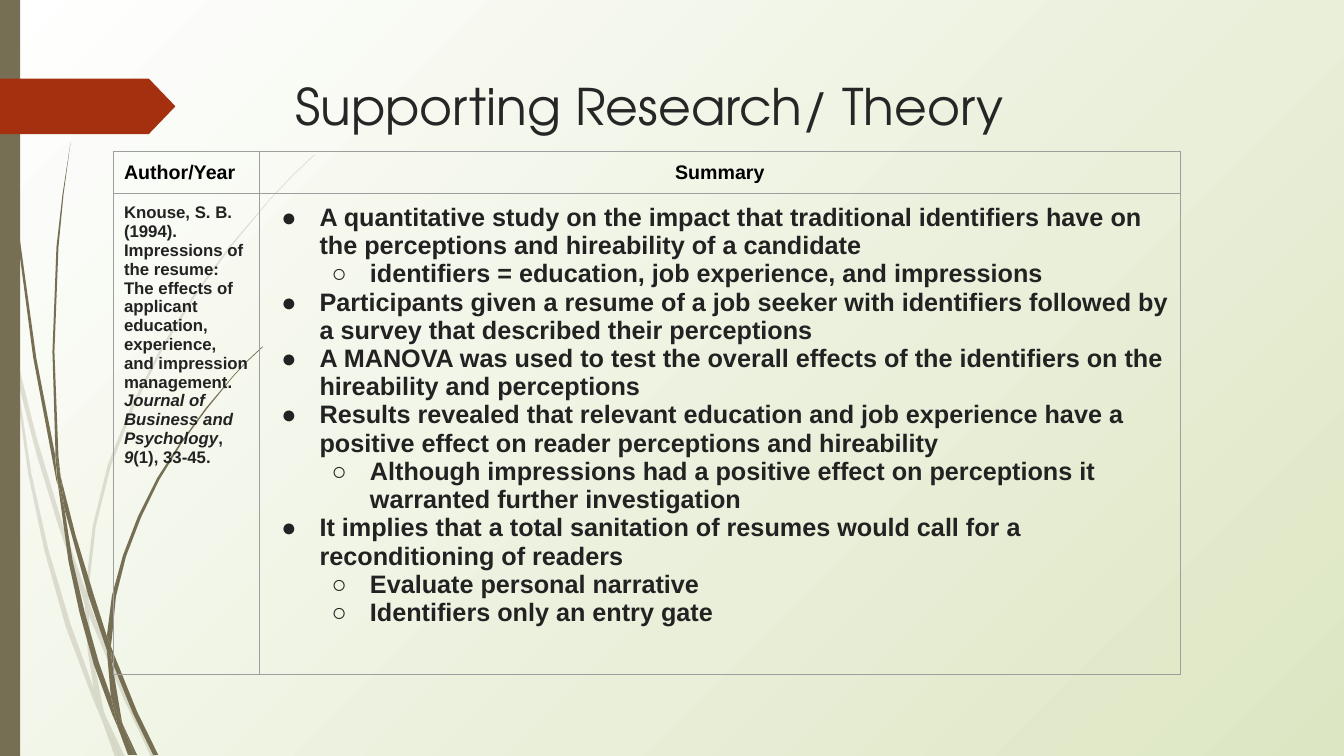
from dataclasses import dataclass

from lxml.etree import SubElement
from pptx import Presentation
from pptx.dml.color import RGBColor
from pptx.enum.shapes import MSO_SHAPE
from pptx.enum.text import MSO_ANCHOR, PP_ALIGN
from pptx.oxml.ns import qn
from pptx.util import Inches, Pt

OLIVE, RUST, TITLE_GREY, BODY_GREY = "766F54", "A53010", "262626", "222222"
BLACK, BORDER = "000000", "9E9E9E"
Outline = list[tuple[float, float]]


@dataclass
class Grass:
    """A tuft of blades, each an outline in inches, with its opacity in percent."""
    opacity: int
    blades: list[Outline]


@dataclass
class Bullet:
    text: str
    level: int = 0


PALE_GRASS = Grass(20, [
    [(0.11, 3.5), (0.09, 3.22), (0, 2.82), (0, 2.99), (0.1, 3.44)],
    [(0.58, 5.22), (0.84, 5.99), (0.85, 5.86), (0.62, 5.2), (0.36, 4.33), (0.14, 3.45), (0.17, 3.76),
     (0.36, 4.5)],
    [(0.92, 6.07), (0.88, 5.96), (0.88, 6.1), (1.23, 6.94), (1.5, 7.51), (1.55, 7.51), (1.27, 6.92)],
    [(1.19, 7.51), (1.24, 7.51), (1.05, 7.11)],
    [(0.93, 6.83), (0.7, 6.19), (0.48, 5.45), (0.31, 4.69), (0.17, 3.76), (0.11, 3.5), (0.28, 4.7),
     (0.44, 5.46), (0.65, 6.21), (0.92, 6.93), (1.01, 7.14), (0.99, 7.07)],
    [(0.84, 5.99), (0.87, 6.46), (0.93, 6.83), (0.96, 6.92), (1.05, 7.11), (1.03, 7.06), (0.91, 6.46),
     (0.88, 6.1), (0.88, 6.08)],
    [(0.88, 5.84), (0.95, 5.22), (1.1, 4.62), (1.33, 4.04), (1.6, 3.49), (1.93, 2.95), (2.29, 2.45),
     (2.68, 1.98), (2.9, 1.75), (3.12, 1.54), (3.12, 1.53), (2.89, 1.75), (2.68, 1.97), (2.28, 2.44),
     (1.91, 2.94), (1.58, 3.48), (1.3, 4.03), (1.07, 4.61), (0.92, 5.22), (0.85, 5.84), (0.85, 5.86),
     (0.88, 5.96)],
    [(1.01, 7.14), (1.14, 7.51), (1.19, 7.51)],
    [(0.88, 6.08), (0.88, 6.1), (0.88, 5.96), (0.85, 5.86), (0.84, 5.99)],
    [(0.96, 6.92), (0.93, 6.83), (0.99, 7.07), (1.01, 7.14), (1.19, 7.51), (1.05, 7.11)],
])
DARK_GRASS = Grass(100, [
    [(0.07, 1.1), (0.17, 2.33), (0.33, 3.55), (0.56, 4.77), (0.57, 4.81), (0.55, 4.57), (0.55, 4.53),
     (0.36, 3.55), (0.19, 2.32), (0.08, 1.09), (0.05, 0.48), (0.04, 0), (0.03, 0), (0.04, 0.48)],
    [(0.88, 5.92), (1.06, 6.45), (1.06, 6.33), (1.06, 6.31), (0.93, 5.9), (0.75, 5.31), (0.6, 4.72),
     (0.64, 5.05)],
    [(1.13, 6.49), (1.1, 6.41), (1.11, 6.56), (1.32, 7.08), (1.52, 7.49), (1.57, 7.49), (1.36, 7.06)],
    [(1.1, 6.91), (0.98, 6.57), (0.84, 6.07), (0.72, 5.56), (0.64, 5.05), (0.57, 4.77), (0.68, 5.57),
     (0.79, 6.08), (0.93, 6.59), (1.11, 7.08), (1.17, 7.22), (1.16, 7.17)],
    [(0.6, 4.72), (0.58, 4.53), (0.54, 3.49), (0.58, 2.45), (0.63, 1.93), (0.7, 1.41), (0.62, 1.93),
     (0.56, 2.45), (0.52, 3.49), (0.55, 4.49)],
    [(1.33, 7.49), (1.36, 7.49), (1.22, 7.19)],
    [(0.57, 4.77), (0.64, 5.05), (0.6, 4.72), (0.55, 4.49), (0.55, 4.53)],
    [(1.11, 6.33), (1.15, 5.92), (1.25, 5.52), (1.4, 5.13), (1.58, 4.76), (1.8, 4.4), (2.05, 4.06),
     (2.31, 3.74), (2.45, 3.59), (2.61, 3.44), (2.6, 3.44), (2.45, 3.58), (2.31, 3.73), (2.04, 4.05),
     (1.79, 4.39), (1.56, 4.74), (1.37, 5.12), (1.22, 5.51), (1.11, 5.91), (1.06, 6.31), (1.1, 6.41)],
    [(1.17, 7.22), (1.27, 7.49), (1.31, 7.49)],
    [(1.06, 6.45), (1.1, 6.91), (1.16, 7.06), (1.22, 7.19), (1.21, 7.16), (1.11, 6.56), (1.09, 6.51)],
    [(1.06, 6.45), (1.09, 6.51), (1.11, 6.56), (1.1, 6.41), (1.06, 6.31), (1.06, 6.33)],
    [(1.16, 7.06), (1.1, 6.91), (1.16, 7.17), (1.17, 7.22), (1.3, 7.49), (1.33, 7.49), (1.22, 7.19)],
])

CITATION = [
    ("Knouse, S. B. (1994). Impressions of the resume: The effects of applicant education, experience, "
     "and impression management. ", False),
    ("Journal of Business and Psychology", True), (", ", False), ("9", True), ("(1), 33-45.", False),
]
SUMMARY = [
    Bullet("A quantitative study on the impact that traditional identifiers have on the perceptions and "
           "hireability of a candidate"),
    Bullet("identifiers = education, job experience, and impressions", 1),
    Bullet("Participants given a resume of a job seeker with identifiers followed by a survey that described "
           "their perceptions"),
    Bullet("A MANOVA was used to test the overall effects of the identifiers on the hireability and perceptions"),
    Bullet("Results revealed that relevant education and job experience have a positive effect on reader "
           "perceptions and hireability"),
    Bullet("Although impressions had a positive effect on perceptions it warranted further investigation", 1),
    Bullet("It implies that a total sanitation of resumes would call for a reconditioning of readers"),
    Bullet("Evaluate personal narrative", 1),
    Bullet("Identifiers only an entry gate", 1),
]


def color(value: str) -> RGBColor:
    return RGBColor.from_string(value)


def add_text(paragraph, text: str, *, size: float, fill: str, font: str = "Arial", bold: bool = True,
             italic: bool = False) -> None:
    run = paragraph.add_run()
    run.text = text
    run.font.size, run.font.name = Pt(size), font
    run.font.bold, run.font.italic = bold, italic
    run.font.color.rgb = color(fill)


def fill_shape(shape, fill: str, opacity: int = 100) -> None:
    shape.shadow.inherit = False
    shape.fill.solid()
    shape.fill.fore_color.rgb = color(fill)
    shape.line.fill.background()
    if opacity < 100:
        hue = next(shape.element.iter(qn("a:srgbClr")))
        SubElement(hue, qn("a:alpha"), val=str(opacity * 1000))


def add_grass(slide, grass: Grass) -> None:
    for blade in grass.blades:
        start, *rest = [(Inches(x), Inches(y)) for x, y in blade]
        builder = slide.shapes.build_freeform(*start)
        builder.add_line_segments(rest, close=True)
        fill_shape(builder.convert_to_shape(), OLIVE, grass.opacity)


def add_background(slide) -> None:
    """Radial gradient spreading from the top left corner."""
    fill = slide.background.fill
    fill.gradient()
    for stop, value in zip(fill.gradient_stops, ("FFFFFF", "DDE6C3")):
        stop.color.rgb = color(value)
    gradient = next(slide.element.iter(qn("a:gradFill")))
    gradient.remove(gradient.find(qn("a:lin")))
    radial = SubElement(gradient, qn("a:path"))
    radial.set("path", "circle")
    SubElement(radial, qn("a:fillToRect"), r="100000", b="100000")


def format_cell(cell) -> None:
    cell.margin_left = cell.margin_right = cell.margin_top = cell.margin_bottom = Inches(0.1)
    properties = cell._tc.get_or_add_tcPr()
    for side in ("lnL", "lnR", "lnT", "lnB"):
        line = SubElement(properties, qn(f"a:{side}"), w=str(Pt(0.75)))
        SubElement(SubElement(line, qn("a:solidFill")), qn("a:srgbClr"), val=BORDER)
    cell.fill.background()


def add_bullet(paragraph, bullet: Bullet) -> None:
    paragraph.level = bullet.level
    properties = paragraph._p.get_or_add_pPr()
    properties.set("marL", str(Inches(0.5 * (bullet.level + 1))))
    properties.set("indent", str(Inches(-0.38)))
    SubElement(SubElement(properties, qn("a:buClr")), qn("a:srgbClr"), val=BODY_GREY)
    SubElement(properties, qn("a:buFont"), typeface="Arial")
    SubElement(properties, qn("a:buChar"), char="●○"[bullet.level])
    add_text(paragraph, bullet.text, size=18, fill=BODY_GREY)


def add_research_table(slide) -> None:
    widths, heights = (1.44, 9.14), (0.42, 4.77)
    table = slide.shapes.add_table(2, 2, Inches(1.13), Inches(1.5), Inches(sum(widths)),
                                   Inches(sum(heights))).table
    table.first_row = table.horz_banding = False
    for column, width in zip(table.columns, widths):
        column.width = Inches(width)
    for row, height in zip(table.rows, heights):
        row.height = Inches(height)
    for cell in table.iter_cells():
        format_cell(cell)
    for index, heading in enumerate(("Author/Year", "Summary")):
        add_text(table.cell(0, index).text_frame.paragraphs[0], heading, size=14, fill=BLACK)
    table.cell(0, 1).text_frame.paragraphs[0].alignment = PP_ALIGN.CENTER
    for text, italic in CITATION:
        add_text(table.cell(1, 0).text_frame.paragraphs[0], text, size=12, fill=BODY_GREY, italic=italic)
    frame = table.cell(1, 1).text_frame
    for index, bullet in enumerate(SUMMARY):
        add_bullet(frame.add_paragraph() if index else frame.paragraphs[0], bullet)


def format_title(title) -> None:
    title.left, title.top, title.width, title.height = map(Inches, (2.83, 0.69, 9.75, 1.4))
    title.text_frame.vertical_anchor = MSO_ANCHOR.TOP
    paragraph = title.text_frame.paragraphs[0]
    paragraph.alignment = PP_ALIGN.LEFT
    add_text(paragraph, "Supporting Research/ Theory", size=36, fill=TITLE_GREY, font="TeX Gyre Adventor",
             bold=False)


def main() -> None:
    presentation = Presentation()
    presentation.slide_width, presentation.slide_height = Inches(13.33), Inches(7.5)
    slide = presentation.slides.add_slide(presentation.slide_layouts[5])
    add_background(slide)
    for grass in (PALE_GRASS, DARK_GRASS):
        add_grass(slide, grass)
    side_bar = slide.shapes.add_shape(MSO_SHAPE.RECTANGLE, 0, 0, Inches(0.2), Inches(7.5))
    fill_shape(side_bar, OLIVE)
    tag = slide.shapes.add_shape(MSO_SHAPE.PENTAGON, 0, Inches(0.78), Inches(1.74), Inches(0.55))
    tag.adjustments[0] = 0.48
    fill_shape(tag, RUST)
    format_title(slide.shapes.title)
    add_research_table(slide)
    presentation.save("out.pptx")


if __name__ == "__main__":
    main()
